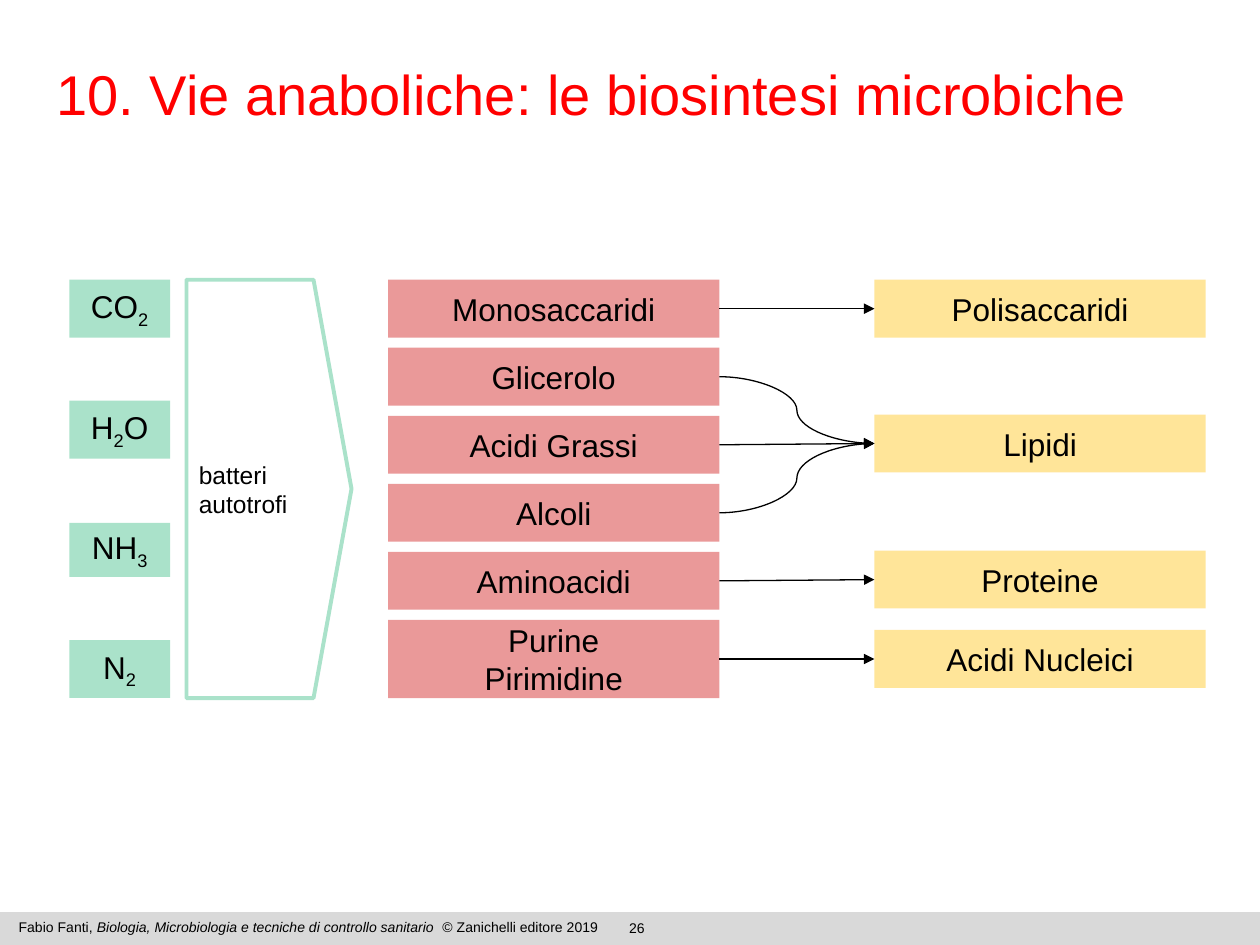
from itertools import groupby

from lxml import etree
from pptx import Presentation
from pptx.dml.color import RGBColor
from pptx.enum.dml import MSO_LINE
from pptx.enum.shapes import MSO_CONNECTOR, MSO_SHAPE
from pptx.enum.text import MSO_ANCHOR, PP_ALIGN
from pptx.oxml.ns import qn
from pptx.util import Inches, Pt

RECT, PLATE = MSO_SHAPE.RECTANGLE, MSO_SHAPE.PENTAGON
STRAIGHT, CURVE = MSO_CONNECTOR.STRAIGHT, MSO_CONNECTOR.CURVE
TOP, MIDDLE = MSO_ANCHOR.TOP, MSO_ANCHOR.MIDDLE
LEFT, CENTER = PP_ALIGN.LEFT, PP_ALIGN.CENTER
SOLID = MSO_LINE.SOLID
RIGHT_SITE, LEFT_SITE = 3, 1

GREY, WHITE, BLACK, RED = "D9D9D9", "FFFFFF", "000000", "FF0000"
GREEN, PINK, YELLOW = "AAE2CA", "EA9999", "FFE599"


def color(value):
    return RGBColor.from_string(value)


def assign(target, values):
    for name, value in values.items():
        setattr(target, name, value)


class Board:
    font = {"name": "Arial"}

    def __init__(self, slide):
        self.slide = slide

    def text(self, shape, lines, size, tint=BLACK, align=LEFT, anchor=TOP, pad=0.05):
        frame = shape.text_frame
        assign(frame, {
            "word_wrap": True, "vertical_anchor": anchor,
            "margin_left": Inches(0.1), "margin_right": Inches(0.1),
            "margin_top": Inches(pad), "margin_bottom": Inches(pad),
        })
        for index, parts in enumerate(lines):
            para = frame.add_paragraph() if index else frame.paragraphs[0]
            para.alignment = align
            for words, style, base in parts:
                run = para.add_run()
                run.text = words
                assign(run.font, {**self.font, "size": Pt(size), **style})
                run.font.color.rgb = color(tint)
                if base:
                    run.font._element.set("baseline", str(base))

    def shape(self, place, kind=RECT, fill=None, edge=None, width=0.75):
        item = self.slide.shapes.add_shape(kind, *map(Inches, place))
        item.shadow.inherit = False
        if fill:
            item.fill.solid()
            item.fill.fore_color.rgb = color(fill)
        else:
            item.fill.background()
        if edge:
            item.line.color.rgb = color(edge)
            item.line.width = Pt(width)
        else:
            item.line.fill.background()
        return item

    def box(self, place, fill, lines):
        item = self.shape(place, fill=fill)
        self.text(item, lines, 18, align=CENTER, anchor=MIDDLE, pad=0.1)
        return item

    def label(self, place, lines, size, align=LEFT):
        item = self.slide.shapes.add_textbox(*map(Inches, place))
        self.text(item, lines, size, align=align)

    def arrow(self, start, end, kind=STRAIGHT):
        item = self.slide.shapes.add_connector(kind, 0, 0, 0, 0)
        item.begin_connect(start, RIGHT_SITE)
        item.end_connect(end, LEFT_SITE)
        assign(item.line, {"width": Pt(0.75), "dash_style": SOLID})
        item.line.color.rgb = color(BLACK)
        props = item._element.spPr
        etree.SubElement(props.find(qn("a:ln")), qn("a:tailEnd"), type="triangle")
        etree.SubElement(props, qn("a:effectLst"))


def plain(words, **style):
    return words, style, 0


def formula(words):
    return [("".join(part), {}, -25000 if low else 0)
            for low, part in groupby(words, str.isdigit)]


def main():
    deck = Presentation()
    assign(deck, {"slide_width": Inches(10), "slide_height": Inches(7.5)})
    board = Board(deck.slides.add_slide(deck.slide_layouts[6]))

    board.shape((0, 7.24, 10, 0.26), fill=GREY)
    board.label((3.94, 7.25, 2.23, 0.17), [[plain("26")]], 8, CENTER)
    board.label((0.05, 7.24, 5.04, 0.24), [[
        plain("Fabio Fanti, "),
        plain("Biologia, Microbiologia e tecniche di controllo sanitario", italic=True),
        plain("  © Zanichelli editore 2019"),
    ]], 8)

    title = board.shape((0.35, 0.42, 9.65, 0.97), fill=WHITE, edge=WHITE)
    board.text(title, [[plain("10. Vie anaboliche: le biosintesi microbiche")]], 32, RED)

    sources = [("CO2", 2.22, 0.46), ("H2O", 3.18, 0.46),
               ("NH3", 4.15, 0.43), ("N2", 5.08, 0.46)]
    for name, top, height in sources:
        board.box((0.55, top, 0.8, height), GREEN, [formula(name)])

    plate = board.shape((1.48, 2.22, 1.31, 3.32), PLATE, edge=GREEN, width=2.25)
    plate.adjustments[0] = 0.23
    board.text(plate, [[plain("batteri autotrofi")]], 14, anchor=MIDDLE, pad=0.1)

    units = {}
    names = ["Monosaccaridi", "Glicerolo", "Acidi Grassi", "Alcoli",
             "Aminoacidi", "Purine\nPirimidine"]
    for row, name in enumerate(names):
        lines = [[plain(line)] for line in name.split("\n")]
        height = 0.46 if len(lines) == 1 else 0.62
        units[name] = board.box((3.08, 2.22 + 0.54 * row, 2.63, height), PINK, lines)

    goals = {"Polisaccaridi": 2.22, "Lipidi": 3.29, "Proteine": 4.37, "Acidi Nucleici": 5}
    ends = {name: board.box((6.94, top, 2.63, 0.46), YELLOW, [[plain(name)]])
            for name, top in goals.items()}

    links = [("Polisaccaridi", STRAIGHT), ("Lipidi", CURVE), ("Lipidi", STRAIGHT),
             ("Lipidi", CURVE), ("Proteine", STRAIGHT), ("Acidi Nucleici", STRAIGHT)]
    for name, (goal, kind) in zip(names, links):
        board.arrow(units[name], ends[goal], kind)

    deck.save("out.pptx")


if __name__ == "__main__":
    main()
